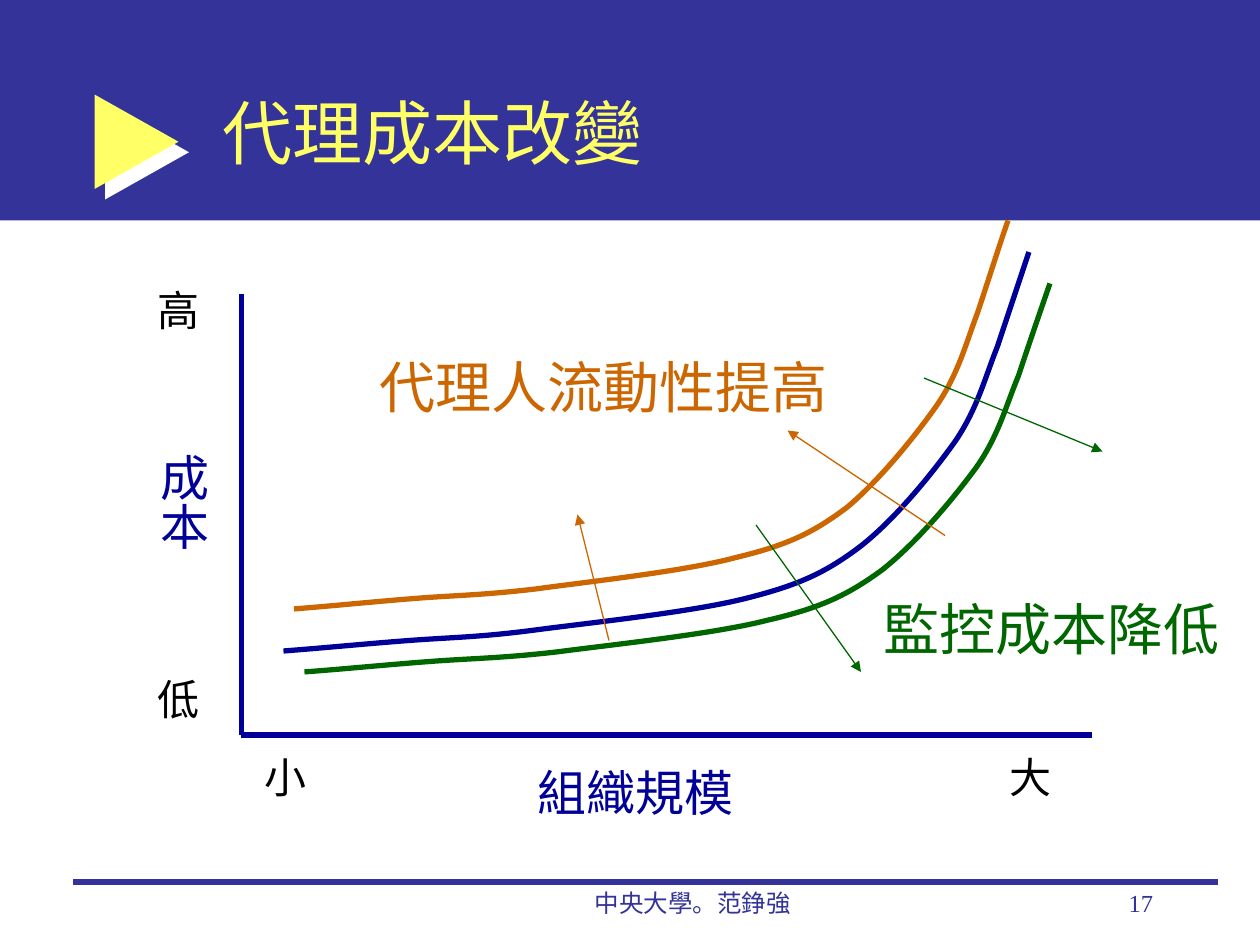
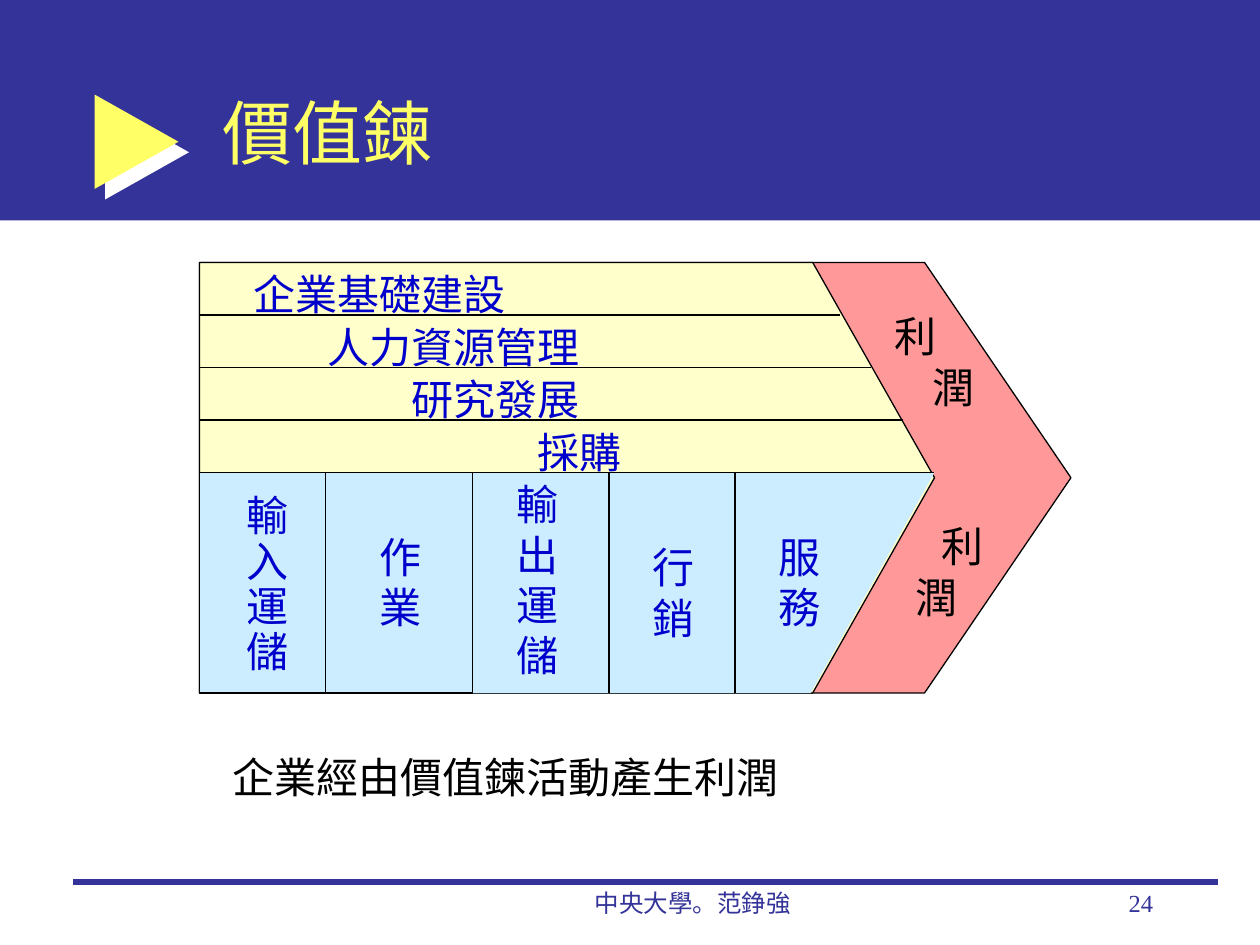
from dataclasses import dataclass
from typing import NamedTuple

import lxml.etree
import pptx
import pptx.dml.color
import pptx.enum.shapes
import pptx.enum.text
import pptx.oxml.ns
import pptx.util

PX = 7620  # EMU in one px, 120 px to the inch
WIDE, HIGH = 1200, 900

qn = pptx.oxml.ns.qn
Form = pptx.enum.shapes.MSO_SHAPE
Align = pptx.enum.text.PP_ALIGN


@dataclass(frozen=True)
class Theme:
    band: str = "333399"
    title: str = "FFFF66"
    white: str = "FFFFFF"
    black: str = "000000"
    axis: str = "000099"
    green: str = "006600"
    orange: str = "CC6600"
    label: str = "0000CC"
    profit: str = "FF9999"
    support: str = "FFFFCC"
    primary: str = "CCECFF"
    serif: str = "Times New Roman"
    sans: str = "Noto Sans CJK SC"
    title_size: int = 40
    note_size: int = 32
    axis_size: int = 28
    text_size: int = 24
    foot_size: int = 14
    thick: float = 3
    thin: float = 0.75


THEME = Theme()


class Box(NamedTuple):
    x: int
    y: int
    w: int
    h: int


class Line(NamedTuple):
    x1: int
    y1: int
    x2: int
    y2: int


class Label(NamedTuple):
    text: str
    x: int
    y: int
    size: int
    color: str
    upright: bool = False


class Curve(NamedTuple):
    box: Box
    color: str


class Block(NamedTuple):
    form: Form
    box: Box
    fill: str
    line: str | None = None
    adjust: tuple[float, ...] = ()


class Cell(NamedTuple):
    text: str
    box: Box
    space: float = 1.0


# Start point, then three points for each Bezier piece
BEND = Box(0, 0, 710, 380)
BEND_DOTS = [
    (710, 0),
    (700, 30), (690, 60), (680, 90),
    (668, 120), (661, 149), (640, 180),
    (618, 211), (583, 254), (550, 280),
    (517, 305), (492, 317), (440, 330),
    (389, 343), (293, 353), (240, 360),
    (187, 367), (160, 367), (120, 370),
    (80, 373), (40, 377), (0, 380),
]


def scale(*parts: float) -> list[int]:
    return [round(part * PX) for part in parts]


def rgb(color: str) -> pptx.dml.color.RGBColor:
    return pptx.dml.color.RGBColor.from_string(color)


def add_run(para, text: str, size: int, color: str, font: str) -> None:
    run = para.add_run()
    run.text = text
    run.font.size = pptx.util.Pt(size)
    run.font.name = font
    run.font.color.rgb = rgb(color)


def add_text(slide, text: str, box: Box, size: int, color: str,
             font: str = THEME.serif, align: Align = Align.LEFT):
    shape = slide.shapes.add_textbox(*scale(*box))
    shape.text_frame.word_wrap = True
    para = shape.text_frame.paragraphs[0]
    para.alignment = align
    add_run(para, text, size, color, font)
    return shape


def add_label(slide, label: Label) -> None:
    """Add one unwrapped line in a box that hugs its text."""
    length, depth = len(label.text) * label.size * 5 / 3, label.size * 2
    if label.upright:
        w, h = 80, round(length + 12)
    else:
        w, h = round(length + 24), depth + 12
    shape = add_text(slide, label.text, Box(label.x, label.y, w, h),
                     label.size, label.color)
    shape.text_frame.word_wrap = False
    shape.text_frame.auto_size = pptx.enum.text.MSO_AUTO_SIZE.SHAPE_TO_FIT_TEXT
    if label.upright:
        shape.element.find(".//" + qn("a:bodyPr")).set("vert", "eaVert")


def add_block(slide, block: Block):
    shape = slide.shapes.add_shape(block.form, *scale(*block.box))
    shape.shadow.inherit = False
    shape.fill.solid()
    shape.fill.fore_color.rgb = rgb(block.fill)
    for place, value in enumerate(block.adjust):
        shape.adjustments[place] = value
    if block.line:
        shape.line.color.rgb = rgb(block.line)
        shape.line.width = pptx.util.Pt(THEME.thin)
    else:
        shape.line.fill.background()
    return shape


def add_line(slide, line: Line, color: str, width: float,
             arrow: bool = False) -> None:
    shape = slide.shapes.add_connector(
        pptx.enum.shapes.MSO_CONNECTOR.STRAIGHT, *scale(*line))
    shape.line.color.rgb = rgb(color)
    shape.line.width = pptx.util.Pt(width)
    if arrow:
        edge = shape.element.find(".//" + qn("a:ln"))
        lxml.etree.SubElement(edge, qn("a:tailEnd"), type="triangle")
    lxml.etree.SubElement(shape.element.spPr, qn("a:effectLst"))


def add_curve(slide, curve: Curve) -> None:
    """Fit the shared bend to a box, joining each three points as a Bezier."""
    box = curve.box
    dots = [(round(box.x + x * box.w / BEND.w), round(box.y + y * box.h / BEND.h))
            for x, y in BEND_DOTS]
    pen = slide.shapes.build_freeform(*dots[0], scale=PX)
    pen.add_line_segments(dots[1:], close=False)
    shape = pen.convert_to_shape()
    shape.shadow.inherit = False
    shape.fill.background()
    shape.line.color.rgb = rgb(curve.color)
    shape.line.width = pptx.util.Pt(THEME.thick)
    track = shape.element.find(".//" + qn("a:path"))
    steps = track.findall(qn("a:lnTo"))
    for first in range(0, len(steps), 3):
        bend = lxml.etree.SubElement(track, qn("a:cubicBezTo"))
        for step in steps[first:first + 3]:
            bend.append(step[0])
            track.remove(step)


def add_shade(shape) -> None:
    """Give the title arrow its hard white shadow."""
    effects = shape.element.spPr.find(qn("a:effectLst"))
    shade = lxml.etree.SubElement(
        effects, qn("a:outerShdw"), dist=str(pptx.util.Pt(8.5)),
        dir=str(45 * 60000), algn="ctr", rotWithShape="0")
    lxml.etree.SubElement(shade, qn("a:srgbClr"), val=THEME.white)


def add_page(deck, title: str, number: int):
    """Add a slide with the band, arrow, title, rule and footers."""
    slide = deck.slides.add_slide(deck.slide_layouts[5])
    add_block(slide, Block(Form.RECTANGLE, Box(0, 0, WIDE, 210), THEME.band))
    add_shade(add_block(slide, Block(Form.RIGHT_ARROW, Box(90, 90, 80, 90),
                                     THEME.title, adjust=(0.384, 1))))
    add_line(slide, Line(70, 840, 1160, 840), THEME.band, THEME.thick)
    add_text(slide, "中央大學。范錚強", Box(470, 840, 380, 60),
             THEME.foot_size, THEME.band, align=Align.CENTER)
    add_text(slide, str(number), Box(860, 840, 250, 60),
             THEME.foot_size, THEME.band, align=Align.RIGHT)

    head = slide.shapes.title
    head.element.getparent().append(head.element)
    head.left, head.top, head.width, head.height = scale(200, 50, 910, 150)
    head.text_frame.vertical_anchor = pptx.enum.text.MSO_ANCHOR.MIDDLE
    para = head.text_frame.paragraphs[0]
    para.alignment = Align.LEFT
    add_run(para, title, THEME.title_size, THEME.title, THEME.sans)
    return slide


def draw_costs(deck) -> None:
    slide = add_page(deck, "代理成本改變", 17)
    for axis in (Line(230, 280, 230, 700), Line(230, 700, 1040, 700)):
        add_line(slide, axis, THEME.axis, THEME.thick)
    for curve in (
        Curve(Box(270, 240, 710, 380), THEME.axis),
        Curve(Box(290, 270, 710, 370), THEME.green),
        Curve(Box(280, 210, 680, 370), THEME.orange),
    ):
        add_curve(slide, curve)
    for line, color in (
        (Line(880, 360, 1050, 430), THEME.green),
        (Line(720, 500, 820, 640), THEME.green),
        (Line(900, 510, 750, 410), THEME.orange),
        (Line(580, 610, 550, 490), THEME.orange),
    ):
        add_line(slide, line, color, THEME.thin, arrow=True)
    for label in (
        Label("組織規模", 500, 720, THEME.axis_size, THEME.axis),
        Label("成本", 128, 420, THEME.axis_size, THEME.axis, upright=True),
        Label("小", 240, 710, THEME.text_size, THEME.black),
        Label("大", 950, 710, THEME.text_size, THEME.black),
        Label("高", 138, 265, THEME.text_size, THEME.black),
        Label("低", 138, 636, THEME.text_size, THEME.black),
        Label("監控成本降低", 830, 560, THEME.note_size, THEME.green),
        Label("代理人流動性提高", 350, 330, THEME.note_size, THEME.orange),
    ):
        add_label(slide, label)


def draw_chain(deck) -> None:
    slide = add_page(deck, "價值鍊", 24)
    left, top, middle, base, row = 190, 250, 450, 660, 50
    for block in (
        Block(Form.PENTAGON, Box(left, top, 830, 410), THEME.profit,
              THEME.black, (0.34,)),
        Block(Form.PENTAGON, Box(left, top, 700, 410), THEME.support,
              THEME.black, (0.283,)),
        Block(Form.FLOWCHART_MANUAL_OPERATION,
              Box(300, middle, 590, base - middle), THEME.primary),
        Block(Form.RECTANGLE, Box(left, middle, 260, base - middle),
              THEME.primary, THEME.black),
    ):
        add_block(slide, block)

    tasks = (("企業基礎建設", 230), ("人力資源管理", 300),
             ("研究發展", 380), ("採購", 500))
    for place, (text, x) in enumerate(tasks):
        y = top + place * row
        add_line(slide, Line(left, y + row, 800 + 30 * place, y + row),
                 THEME.black, THEME.thin)
        add_text(slide, text, Box(x, y, 330, row), THEME.text_size,
                 THEME.label, THEME.sans)
    for x in (310, 580, 700):
        add_line(slide, Line(x, middle, x, base), THEME.black, THEME.thin)

    for cell in (
        Cell("輸入運儲", Box(223, 466, 55, 220), space=0.9),
        Cell("作業", Box(350, 500, 60, 120)),
        Cell("輸出運儲", Box(480, 450, 60, 210)),
        Cell("行銷", Box(610, 510, 60, 120)),
        Cell("服務", Box(730, 500, 60, 120)),
    ):
        shape = add_text(slide, cell.text, cell.box, THEME.text_size,
                         THEME.label, THEME.sans)
        shape.text_frame.paragraphs[0].line_spacing = cell.space

    for box, margin, indent in (
        (Box(840, 290, 100, 120), 36, -36),
        (Box(860, 490, 100, 120), 0, 25),
    ):
        shape = add_text(slide, "利潤", box, THEME.text_size, THEME.black)
        props = shape.text_frame.paragraphs[0]._p.get_or_add_pPr()
        props.set("marL", str(margin * PX))
        props.set("indent", str(indent * PX))
    add_text(slide, "企業經由價值鍊活動產生利潤", Box(210, 710, 760, 50),
             THEME.text_size, THEME.black)


def main() -> None:
    deck = pptx.Presentation()
    deck.slide_width, deck.slide_height = scale(WIDE, HIGH)
    draw_costs(deck)
    draw_chain(deck)
    deck.save("out.pptx")


if __name__ == "__main__":
    main()
